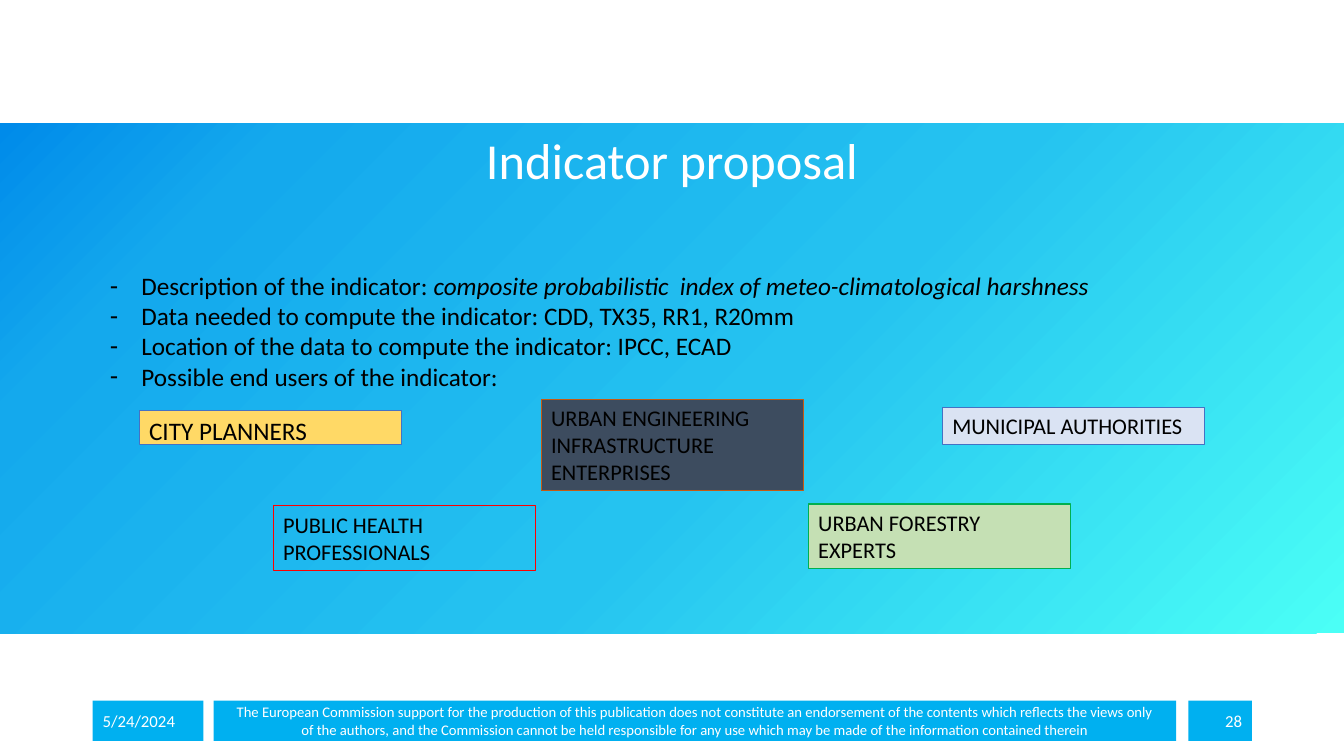
import pptx
import pptx.util
import pptx.dml.color
import pptx.enum.shapes
import pptx.enum.text
import pptx.oxml
import pptx.oxml.ns
from dataclasses import dataclass

Pt = pptx.util.Pt
Align = pptx.enum.text.PP_ALIGN
Anchor = pptx.enum.text.MSO_ANCHOR


@dataclass(frozen=True)
class Theme:
    font: str = "Calibri"
    title_size: float = 36
    list_size: float = 18
    label_size: float = 16
    footer_size: float = 12
    notice_size: float = 10.5
    white: str = "FFFFFF"
    black: str = "000000"
    footer_fill: str = "00B0F0"
    band_stops: tuple = ((0, "4BFFF6"), (44, "25C3F0"), (84, "14A9ED"), (100, "008BEA"))


THEME = Theme()

# Each item is a list of (wording, italic) spans.
INDICATOR_POINTS = [
    [("Description of the indicator: ", False),
     ("composite probabilistic  index of meteo-climatological harshness", True)],
    [("Data needed to compute the indicator: CDD, TX35, RR1, R20mm", False)],
    [("Location of the data to compute the indicator: IPCC, ECAD", False)],
    [("Possible end users of the indicator:", False)],
]

# Wording, left, top, height, fill, line, type size
END_USERS = [
    ("MUNICIPAL AUTHORITIES", 673.2, 290.9, 26.6, "DAE3F3", "4472C4", THEME.label_size),
    ("URBAN FORESTRY EXPERTS", 577.4, 360, 46, "C5E0B4", "00B050", THEME.label_size),
    ("CITY PLANNERS", 99.4, 293, 24.5, "FFD966", "4472C4", THEME.list_size),
    ("PUBLIC HEALTH PROFESSIONALS", 195.1, 361.4, 46, None, "FF0000", THEME.label_size),
    ("URBAN ENGINEERING INFRASTRUCTURE ENTERPRISES", 386.6, 285.1, 65.5,
     "3D4C5F", "C55A11", THEME.label_size),
]
END_USER_WIDTH = 187.2

NOTICE = [
    "The European Commission support for the production of this publication does not "
    "constitute an endorsement of the contents which reflects the views only",
    "of the authors, and the Commission cannot be held responsible for any use which "
    "may be made of the information contained therein",
]

# Lines, left, width, alignment, type size
FOOTER = [
    (["5/24/2024"], 66.2, 79.2, Align.LEFT, THEME.footer_size),
    (NOTICE, 152.6, 687.6, Align.CENTER, THEME.notice_size),
    (["28"], 848.9, 45.4, Align.RIGHT, THEME.footer_size),
]
FOOTER_TOP, FOOTER_HEIGHT = 500.4, 28.8


def rgb(value):
    return pptx.dml.color.RGBColor.from_string(value)


def place(shape, left, top, width, height):
    shape.left, shape.top = Pt(left), Pt(top)
    shape.width, shape.height = Pt(width), Pt(height)


def style(para, size, color, align=Align.LEFT):
    para.alignment = align
    para.font.name = THEME.font
    para.font.size = Pt(size)
    para.font.color.rgb = rgb(color)


def add_box(page, left, top, width, height, fill=None, line=None):
    box = page.shapes.add_shape(pptx.enum.shapes.MSO_SHAPE.RECTANGLE,
                                Pt(left), Pt(top), Pt(width), Pt(height))
    box.shadow.inherit = False
    if fill:
        box.fill.solid()
        box.fill.fore_color.rgb = rgb(fill)
    else:
        box.fill.background()
    if line:
        box.line.color.rgb = rgb(line)
        box.line.width = Pt(0.75)
    else:
        box.line.fill.background()
    return box


def write_lines(box, lines, size, color, align, anchor):
    frame = box.text_frame
    frame.word_wrap = True
    frame.vertical_anchor = anchor
    frame.text = "\n".join(lines)
    for para in frame.paragraphs:
        style(para, size, color, align)


def add_band(page):
    """Draw the gradient band behind everything else."""
    band = add_box(page, 0, 88.2, 960, 364.3)
    band.fill.gradient()
    band.fill.gradient_angle = 135
    stops = band._element.spPr.find(".//" + pptx.oxml.ns.qn("a:gsLst"))
    for stop in list(stops):
        stops.remove(stop)
    for percent, color in THEME.band_stops:
        stops.append(pptx.oxml.parse_xml(
            f'<a:gs {pptx.oxml.ns.nsdecls("a")} pos="{percent * 1000}">'
            f'<a:srgbClr val="{color}"/></a:gs>'))
    page.shapes._spTree.insert(2, band._element)


def fill_title(title, wording):
    place(title, 66, 88.2, 828, 51.5)
    title.text_frame.auto_size = pptx.enum.text.MSO_AUTO_SIZE.NONE
    write_lines(title, [wording], THEME.title_size, THEME.white, Align.CENTER, Anchor.BOTTOM)
    title.text_frame.paragraphs[0].line_spacing = 0.9


def add_dash(para):
    """Give a paragraph a hanging dash."""
    properties = para._p.get_or_add_pPr()
    indent = Pt(22.5)
    properties.set("marL", str(indent))
    properties.set("indent", str(-indent))
    properties.append(pptx.oxml.parse_xml(
        f'<a:buChar {pptx.oxml.ns.nsdecls("a")} char="-"/>'))


def fill_list(body, points):
    place(body, 71.3, 189.4, 720.7, 116.6)
    frame = body.text_frame
    frame.auto_size = pptx.enum.text.MSO_AUTO_SIZE.NONE
    frame.vertical_anchor = Anchor.TOP
    for index, spans in enumerate(points):
        para = frame.add_paragraph() if index else frame.paragraphs[0]
        add_dash(para)
        para.space_before = Pt(0)
        style(para, THEME.list_size, THEME.black)
        for wording, italic in spans:
            span = para.add_run()
            span.text = wording
            if italic:
                span.font.italic = True


def main():
    deck = pptx.Presentation()
    deck.slide_width, deck.slide_height = Pt(960), Pt(540)
    page = deck.slides.add_slide(deck.slide_layouts[1])
    add_band(page)
    fill_title(page.shapes.title, "Indicator proposal")
    fill_list(page.placeholders[1], INDICATOR_POINTS)
    for lines, left, width, align, size in FOOTER:
        box = add_box(page, left, FOOTER_TOP, width, FOOTER_HEIGHT, THEME.footer_fill)
        write_lines(box, lines, size, THEME.white, align, Anchor.MIDDLE)
    for wording, left, top, height, fill, line, size in END_USERS:
        box = add_box(page, left, top, END_USER_WIDTH, height, fill, line)
        write_lines(box, [wording], size, THEME.black, Align.LEFT, Anchor.TOP)
    deck.save("out.pptx")


if __name__ == "__main__":
    main()
